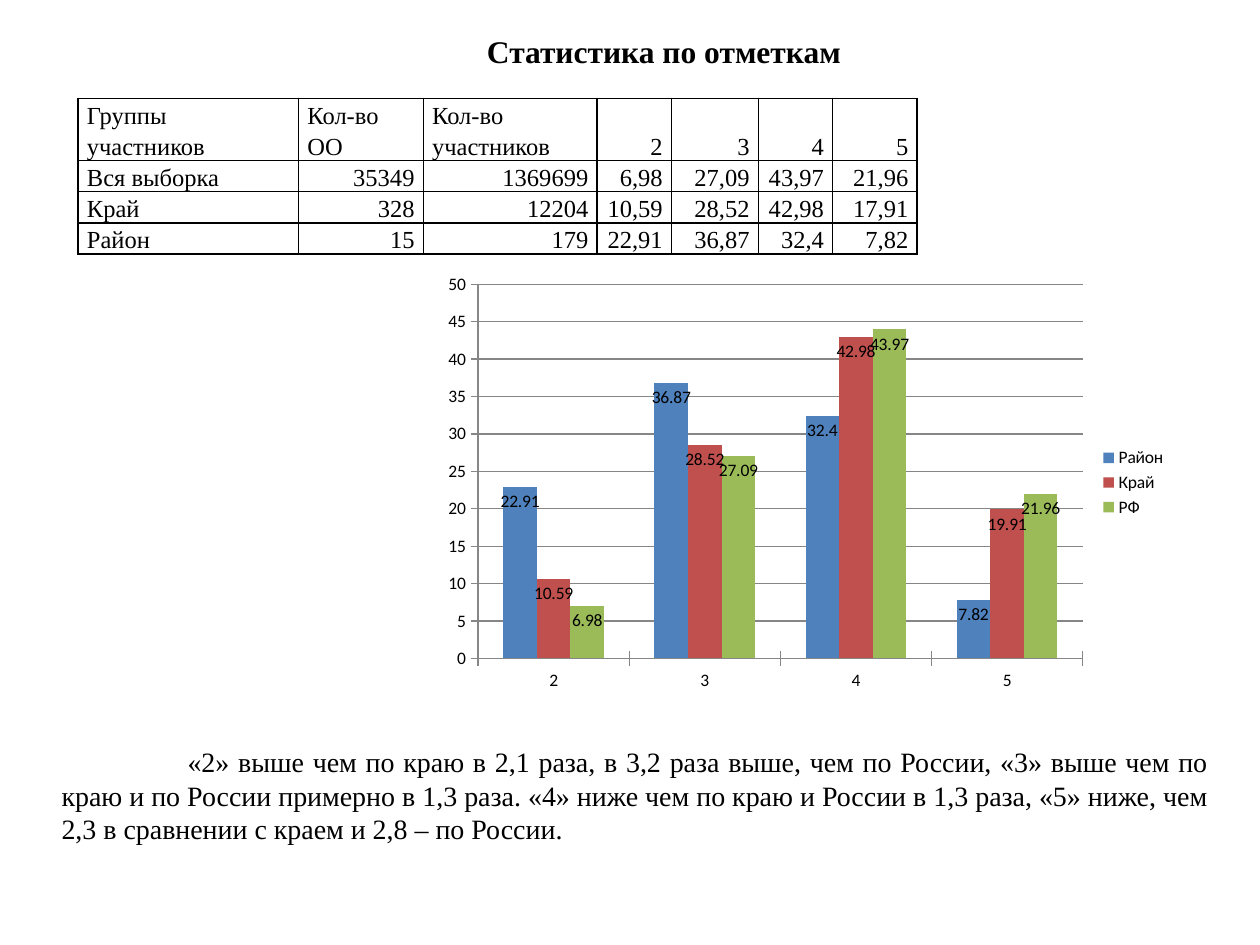
from lxml import etree
from pptx import Presentation
from pptx.chart.data import CategoryChartData
from pptx.dml.color import RGBColor
from pptx.enum.chart import XL_CHART_TYPE, XL_LABEL_POSITION, XL_LEGEND_POSITION, XL_TICK_MARK
from pptx.enum.text import MSO_ANCHOR, PP_ALIGN
from pptx.oxml.ns import qn
from pptx.util import Inches, Pt

LEFT, RIGHT = PP_ALIGN.LEFT, PP_ALIGN.RIGHT
CENTER, JUSTIFY = PP_ALIGN.CENTER, PP_ALIGN.JUSTIFY
BOTTOM = MSO_ANCHOR.BOTTOM
COLUMNS = XL_CHART_TYPE.COLUMN_CLUSTERED
INSIDE = XL_LABEL_POSITION.INSIDE_END
ASIDE = XL_LEGEND_POSITION.RIGHT
CROSS = XL_TICK_MARK.CROSS
BLACK, GRAY = "000000", "868686"


def tint(code):
    """Turn a hex string into a colour."""
    return RGBColor.from_string(code)


def write(frame, text, size=14, bold=False, align=LEFT, lead=None, indent=0):
    """Fill a text frame with one formatted paragraph."""
    para = frame.paragraphs[0]
    para.alignment = align
    para.line_spacing = lead
    if indent:
        para._p.get_or_add_pPr().set("indent", str(indent))
    run = para.add_run()
    run.text = text
    font = run.font
    font.name, font.size, font.bold = "Times New Roman", Pt(size), bold
    font.color.rgb = tint(BLACK)


deck = Presentation()
deck.slide_width, deck.slide_height = Inches(10), Inches(7.5)
slide = deck.slides.add_slide(deck.slide_layouts[6])
shapes = slide.shapes

# Grid of 1000 columns by 750 rows
col = deck.slide_width // 1000
row = deck.slide_height // 750

# Table of marks
marks = [
    ["Группы участников", "Кол-во ОО", "Кол-во участников", "2", "3", "4", "5"],
    ["Вся выборка", "35349", "1369699", "6,98", "27,09", "43,97", "21,96"],
    ["Край", "328", "12204", "10,59", "28,52", "42,98", "17,91"],
    ["Район", "15", "179", "22,91", "36,87", "32,4", "7,82"],
]
widths = [175, 99, 138, 59, 69, 59, 67]
table = shapes.add_table(len(marks), len(widths), 62 * col, 78 * row,
                         sum(widths) * col, 115 * row).table
table.first_row = table.horz_banding = False
for c, width in enumerate(widths):
    table.columns[c].width = width * col
for r, line in enumerate(marks):
    table.rows[r].height = (23 if r else 46) * row
    for c, text in enumerate(line):
        cell = table.cell(r, c)
        cell.margin_left = cell.margin_right = 7 * col
        cell.margin_top = cell.margin_bottom = 0
        cell.vertical_anchor = BOTTOM
        label = c == 0 or (r == 0 and c < 3)
        write(cell.text_frame, text, align=LEFT if label else RIGHT, lead=1.15)
        props = cell._tc.get_or_add_tcPr()
        for side in ("a:lnL", "a:lnR", "a:lnT", "a:lnB"):
            edge = etree.SubElement(props, qn(side), w=str(Pt(1)))
            fill = etree.SubElement(edge, qn("a:solidFill"))
            etree.SubElement(fill, qn("a:srgbClr"), val=BLACK)
        cell.fill.background()

# Summary
note = shapes.add_textbox(39 * col, 586 * row, 930 * col, 91 * row).text_frame
note.word_wrap = True
write(note, "«2» выше чем по краю в 2,1 раза, в 3,2 раза выше, чем по России, «3» "
      "выше чем по краю и по России примерно в 1,3 раза. «4» ниже чем по краю "
      "и России в 1,3 раза, «5» ниже, чем 2,3 в сравнении с краем и 2,8 – по России.",
      size=16, align=JUSTIFY, indent=100 * col)

# Title
title = shapes.add_textbox(375 * col, 16 * row, 304 * col, 45 * row).text_frame
title.word_wrap = False
write(title, "Статистика по отметкам", size=18, bold=True, align=CENTER, lead=1.15)

# Chart of marks
groups = [
    ("Район", "4F81BD", [22.91, 36.87, 32.4, 7.82]),
    ("Край", "C0504D", [10.59, 28.52, 42.98, 19.91]),
    ("РФ", "9BBB59", [6.98, 27.09, 43.97, 21.96]),
]
data = CategoryChartData()
data.categories = ["2", "3", "4", "5"]
for name, _, shares in groups:
    data.add_series(name, shares)
chart = shapes.add_chart(COLUMNS, 344 * col, 211 * row, 592 * col, 344 * row, data).chart
chart.has_title = False
chart.font.name, chart.font.size = "Calibri", Pt(10)
chart.font.color.rgb = tint(BLACK)
chart.has_legend = True
chart.legend.position = ASIDE
chart.legend.include_in_layout = False

plot = chart.plots[0]
plot.vary_by_categories = False
plot.gap_width = 150
for bars, (_, code, _) in zip(plot.series, groups):
    bars.format.fill.solid()
    bars.format.fill.fore_color.rgb = tint(code)
    bars.data_labels.show_value = True
    bars.data_labels.position = INSIDE

scale = chart.value_axis
scale.minimum_scale, scale.maximum_scale, scale.major_unit = 0, 50, 5
scale.has_major_gridlines = True
for axis in (chart.category_axis, scale):
    axis.major_tick_mark = CROSS
    axis.format.line.color.rgb = tint(GRAY)
scale.major_gridlines.format.line.color.rgb = tint(GRAY)

deck.save("out.pptx")
